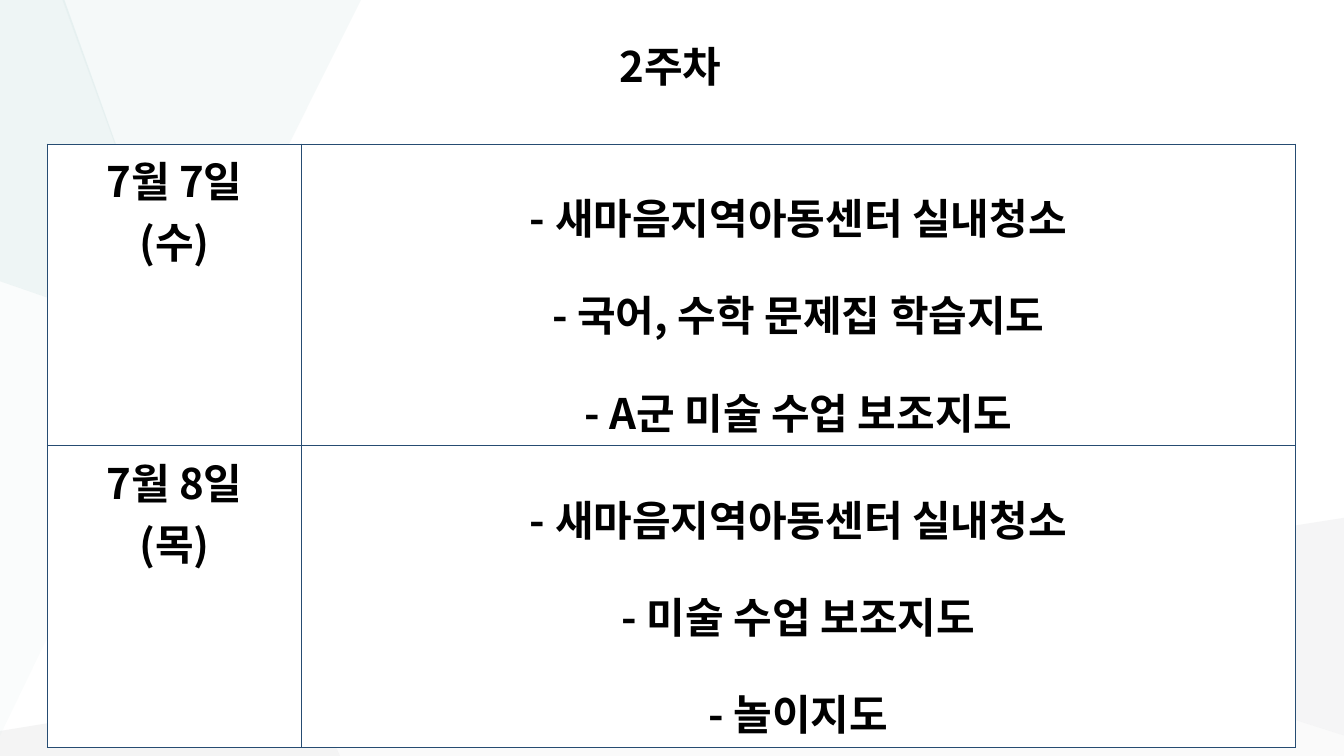
from dataclasses import dataclass
from lxml.etree import SubElement as Sub
from pptx import Presentation as Deck
from pptx.dml.color import RGBColor as Rgb
from pptx.enum.text import MSO_ANCHOR as Anchor, PP_ALIGN as Align
from pptx.oxml.ns import qn
from pptx.util import Inches, Pt


@dataclass(frozen=True)
class Theme:
    """Colours, font and type sizes of the slide."""
    font: str = "Noto Sans CJK KR"
    size: int = 30
    rule: int = 1
    ink: str = "000000"
    paper: str = "FFFFFF"
    border: str = "264C72"
    warm: str = "F3F2F2"
    grey: str = "B6B8BA"
    ash: str = "C6C8CA"
    mist: str = "E0EDED"
    mint: str = "C1DBDB"


class Page:
    """Draws elements on one slide, with lengths in percent of its size."""

    def __init__(self, deck, theme):
        """Add a blank slide to the deck."""
        self.deck, self.theme = deck, theme
        self.shapes = deck.slides.add_slide(deck.slide_layouts[6]).shapes

    def spot(self, x, y):
        """Turn percent shares into slide lengths."""
        return (round(self.deck.slide_width * x / 100),
                round(self.deck.slide_height * y / 100))

    def letter(self, frame, lines, gap=None):
        """Fill a text frame with centred bold lines."""
        theme = self.theme
        frame.text = "\n".join(lines)
        for para in frame.paragraphs:
            para.alignment = Align.CENTER
            para.line_spacing = gap
            for run in para.runs:
                font = run.font
                font.size, font.bold, font.name = Pt(theme.size), True, theme.font
                font.color.rgb = Rgb.from_string(theme.ink)
                Sub(run._r.get_or_add_rPr(), qn("a:ea"), typeface=theme.font)

    def facet(self, color, alpha, *points):
        """Draw a see-through polygon."""
        first, *rest = [self.spot(*point) for point in points]
        pen = self.shapes.build_freeform(*first, scale=1.0)
        pen.add_line_segments(rest, close=True)
        shape = pen.convert_to_shape()
        shape.shadow.inherit = False
        shape.line.fill.background()
        shape.fill.solid()
        shape.fill.fore_color.rgb = Rgb.from_string(color)
        tint = shape.element.spPr.find(".//" + qn("a:srgbClr"))
        Sub(tint, qn("a:alpha"), val=str(alpha * 1000))

    def title(self, text, x, y, wide, high):
        """Place the heading."""
        box = self.shapes.add_textbox(*self.spot(x, y), *self.spot(wide, high))
        frame = box.text_frame
        frame.word_wrap = True
        frame.vertical_anchor = Anchor.MIDDLE
        self.letter(frame, [text])

    def edge(self, cell):
        """Rule all four sides of a cell."""
        props = cell._tc.get_or_add_tcPr()
        for side in ("lnL", "lnR", "lnT", "lnB"):
            line = Sub(props, qn("a:" + side), w=str(Pt(self.theme.rule)))
            fill = Sub(line, qn("a:solidFill"))
            Sub(fill, qn("a:srgbClr"), val=self.theme.border)

    def table(self, rows, x, y, cols, high):
        """Draw the day and task table."""
        area = self.spot(sum(cols), high * len(rows))
        grid = self.shapes.add_table(
            len(rows), len(cols), *self.spot(x, y), *area).table
        grid.first_row = grid.horz_banding = False
        for col, wide in zip(grid.columns, cols):
            col.width = self.spot(wide, 0)[0]
        for row, texts in zip(grid.rows, rows):
            row.height = self.spot(0, high)[1]
            for cell, lines, gap in zip(row.cells, texts, (None, 1.6)):
                self.letter(cell.text_frame, lines, gap)
                self.edge(cell)
                cell.fill.solid()
                cell.fill.fore_color.rgb = Rgb.from_string(self.theme.paper)


def main():
    """Build and save the slide."""
    deck = Deck()
    deck.slide_width, deck.slide_height = Inches(13.33), Inches(7.5)
    theme = Theme()
    page = Page(deck, theme)

    hub, tip, low, foot = (14, 45.8), (65.94, 78), (22.8, 90.1), (25.3, 100)
    left, base = (0, 37.2), (0, 97.3)
    page.facet(theme.warm, 26, hub, low, tip)
    page.facet(theme.grey, 15, low, (0, 96.7), (0, 100), foot)
    page.facet(theme.mist, 31, (26.86, 0), (4.65, 0), hub)
    page.facet(theme.ash, 17, (100, 68.5), tip, (100, 97.3))
    page.facet(theme.grey, 6, tip, low, foot, (100, 100), (100, 97.3))
    page.facet(theme.mint, 27, (4.8, 0), (0, 0), left, hub)
    page.facet(theme.mint, 8, left, base, hub)

    page.title("2주차", 3.53, 1.87, 92.72, 13.73)
    clean = "- 새마음지역아동센터 실내청소"
    rows = [
        (["7월 7일", "(수)"],
         [clean, "- 국어, 수학 문제집 학습지도", "- A군 미술 수업 보조지도"]),
        (["7월 8일", "(목)"],
         [clean, "- 미술 수업 보조지도", "- 놀이지도"]),
    ]
    page.table(rows, 3.53, 19.07, (18.9, 73.97), 39.9)
    deck.save("out.pptx")


if __name__ == "__main__":
    main()
